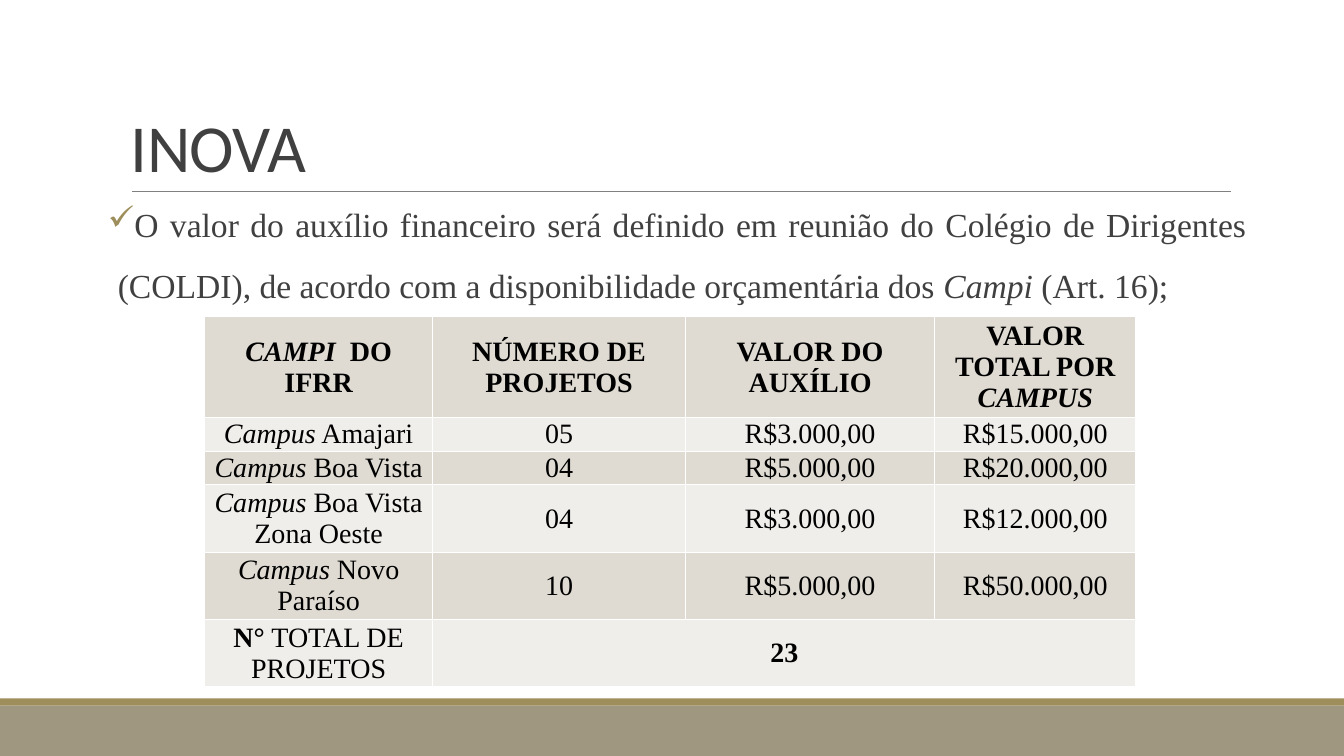
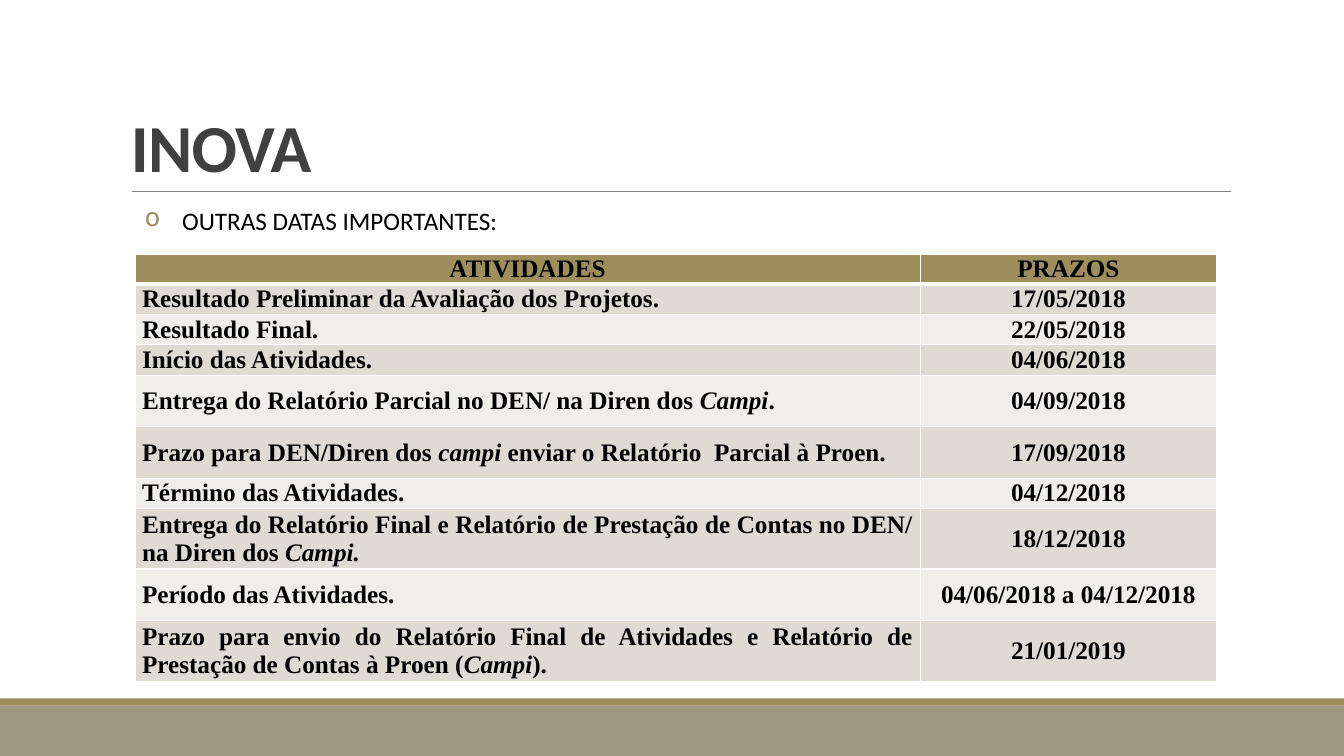
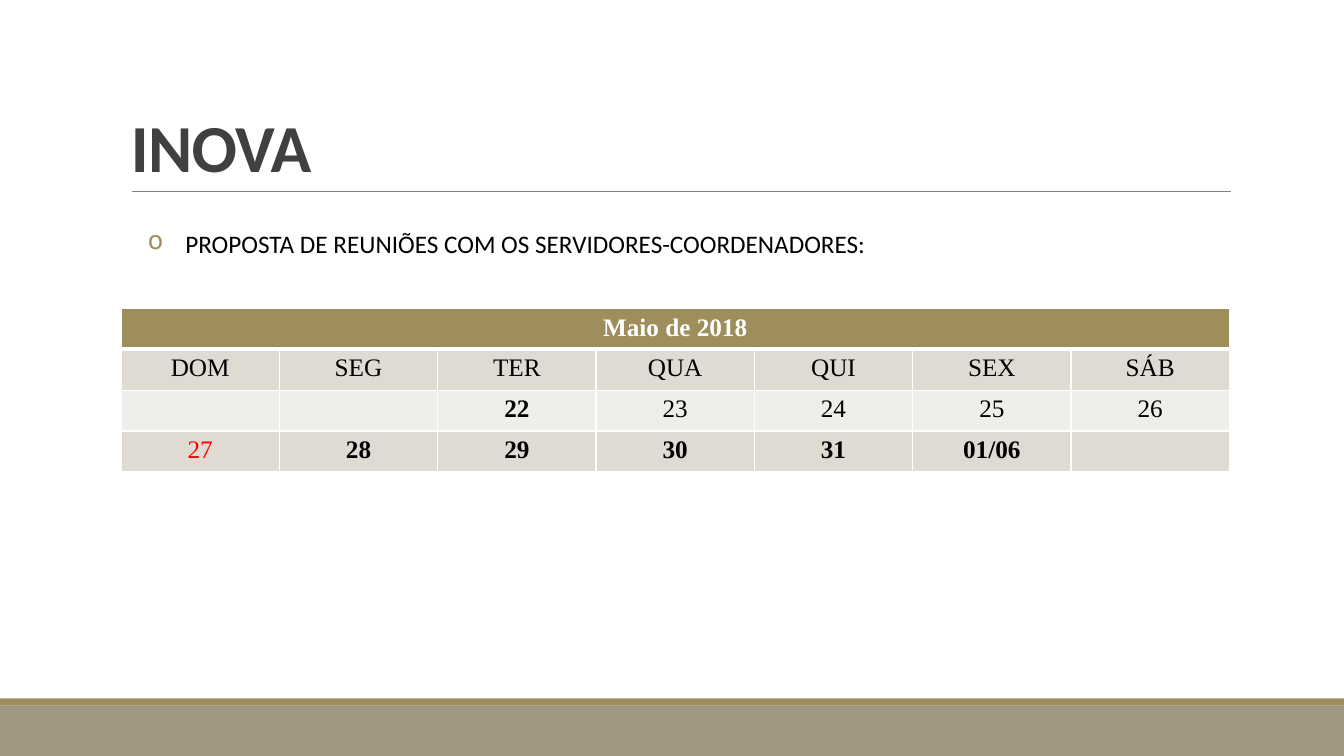
"""Build the three INOVA slides: grants, deadlines and meeting calendar."""
from dataclasses import dataclass, field
from typing import Optional

from lxml import etree
from pptx import Presentation
from pptx.dml.color import RGBColor
from pptx.enum.shapes import MSO_CONNECTOR, MSO_SHAPE
from pptx.enum.text import MSO_ANCHOR, PP_ALIGN
from pptx.oxml.ns import qn
from pptx.util import Cm, Pt

RECTANGLE = MSO_SHAPE.RECTANGLE
STRAIGHT = MSO_CONNECTOR.STRAIGHT
TOP, MIDDLE, BOTTOM = MSO_ANCHOR.TOP, MSO_ANCHOR.MIDDLE, MSO_ANCHOR.BOTTOM
LEFT, CENTER, JUSTIFY = PP_ALIGN.LEFT, PP_ALIGN.CENTER, PP_ALIGN.JUSTIFY

SANS, SERIF = "Calibri", "Times New Roman"
WHITE, BLACK, RED = "FFFFFF", "000000", "FF0000"
GOLD, TAUPE, GRAY, INK = "9E8E5C", "A09781", "808080", "404040"
BAND_FILLS = ("F0EEEA", "DFDBD2")
SLIDE_WIDTH, SLIDE_HEIGHT = 33.87, 19.05


@dataclass(frozen=True)
class Band:
    """A full-width strip at the foot of a slide."""
    top: float
    height: float
    fill: str


@dataclass(frozen=True)
class Grid:
    """A table: in its texts, *stars* mark bold and _underscores_ mark italic."""
    left: float
    top: float
    widths: list[float]
    heights: list[float]
    rows: list[list[str]]
    size: float
    aligns: list[PP_ALIGN]
    anchor: MSO_ANCHOR = MIDDLE
    margins: tuple[float, float] = (0.18, 0)
    header_fill: Optional[str] = None
    header_color: str = BLACK
    merge: Optional[tuple[int, int, int]] = None
    colors: dict[str, str] = field(default_factory=dict)


BANDS = [Band(17.78, 1.27, TAUPE), Band(17.6, 0.18, GOLD)]

GRANTS = Grid(
    5.16, 7.98, [5.74, 6.38, 6.27, 5.08], [1.3, 0.66, 0.66, 1.3, 1.3, 1.3],
    [
        ["*_CAMPI_  DO IFRR*", "*NÚMERO DE PROJETOS*", "*VALOR DO AUXÍLIO*",
         "*VALOR TOTAL POR _CAMPUS_*"],
        ["_Campus_ Amajari", "05", "R$3.000,00", "R$15.000,00"],
        ["_Campus_ Boa Vista", "04", "R$5.000,00", "R$20.000,00"],
        ["_Campus_ Boa Vista Zona Oeste", "04", "R$3.000,00", "R$12.000,00"],
        ["_Campus_ Novo Paraíso", "10", "R$5.000,00", "R$50.000,00"],
        ["*N°* TOTAL DE PROJETOS", "*23*", "", ""],
    ],
    20, [CENTER] * 4, merge=(5, 1, 3),
)

DEADLINES = Grid(
    3.4, 6.4, [19.79, 7.47], [0.71] * 4 + [1.3, 1.3, 0.71] + [1.3] * 3,
    [
        ["*ATIVIDADES*", "*PRAZOS*"],
        ["*Resultado Preliminar da Avaliação dos Projetos.*", "*17/05/2018*"],
        ["*Resultado Final.*", "*22/05/2018*"],
        ["*Início das Atividades.*", "*04/06/2018*"],
        ["*Entrega do Relatório Parcial no DEN/ na Diren dos _Campi_.*",
         "*04/09/2018*"],
        ["*Prazo para DEN/Diren dos _campi_ enviar o Relatório  Parcial à Proen.*",
         "*17/09/2018*"],
        ["*Término das Atividades.*", "*04/12/2018*"],
        ["*Entrega do Relatório Final e Relatório de Prestação de Contas no DEN/ "
         "na Diren dos _Campi._*", "*18/12/2018*"],
        ["*Período das Atividades.*", "*04/06/2018 a 04/12/2018*"],
        ["*Prazo para envio do Relatório Final de Atividades e Relatório de "
         "Prestação de Contas à Proen (_Campi_).*", "*21/01/2019*"],
    ],
    18, [JUSTIFY, CENTER], header_fill=GOLD,
)

CALENDAR = Grid(
    3.05, 7.77, [3.99] * 7, [1.03] * 4,
    [
        ["*Maio de 2018*"] + [""] * 6,
        ["DOM", "SEG", "TER", "QUA", "QUI", "SEX", "SÁB"],
        ["", "", "*22*", "23", "24", "25", "26"],
        ["27", "*28*", "*29*", "*30*", "*31*", "*01/06*", ""],
    ],
    18, [CENTER] * 7, anchor=TOP, margins=(0.25, 0.13), header_fill=GOLD,
    header_color=WHITE, merge=(0, 0, 6), colors={"27": RED},
)


def rgb(color: str) -> RGBColor:
    """Turn a hex string into a colour."""
    return RGBColor.from_string(color)


def write(para, text: str, *, size: float, font: str = SANS, color: str = BLACK,
          align: PP_ALIGN = LEFT, tracking: Optional[int] = None) -> None:
    """Fill a paragraph from marked-up text in one format."""
    para.alignment = align
    for bold_index, part in enumerate(text.split("*")):
        for italic_index, piece in enumerate(part.split("_")):
            if not piece:
                continue
            span = para.add_run()
            span.text = piece
            span.font.name = font
            span.font.size = Pt(size)
            span.font.color.rgb = rgb(color)
            span.font.bold = bold_index % 2 == 1
            span.font.italic = italic_index % 2 == 1
            if tracking is not None:
                span.font._element.set("spc", str(tracking))


def add_bullet(para, mark: str, indent: float) -> None:
    """Give a paragraph a gold bullet with a hanging indent."""
    properties = para._p.get_or_add_pPr()
    properties.set("marL", str(Cm(indent)))
    properties.set("indent", str(-Cm(indent)))
    color = etree.SubElement(properties, qn("a:buClr"))
    etree.SubElement(color, qn("a:srgbClr"), val=GOLD)
    etree.SubElement(properties, qn("a:buChar"), char=mark)


def add_box(page, left: float, top: float, width: float, height: float,
            anchor: MSO_ANCHOR = TOP):
    """Add a wrapping text box and return its frame."""
    box = page.shapes.add_textbox(Cm(left), Cm(top), Cm(width), Cm(height))
    frame = box.text_frame
    frame.word_wrap = True
    frame.vertical_anchor = anchor
    return frame


def add_page(deck, title: str):
    """Add a blank page with the shared bands, rule and title."""
    page = deck.slides.add_slide(deck.slide_layouts[6])
    for band in BANDS:
        strip = page.shapes.add_shape(
            RECTANGLE, 0, Cm(band.top), Cm(SLIDE_WIDTH), Cm(band.height))
        strip.shadow.inherit = False
        strip.fill.solid()
        strip.fill.fore_color.rgb = rgb(band.fill)
        strip.line.fill.background()
    rule = page.shapes.add_connector(
        STRAIGHT, Cm(3.33), Cm(4.83), Cm(31.01), Cm(4.83))
    rule.line.color.rgb = rgb(GRAY)
    rule.line.width = Pt(0.5)
    etree.SubElement(rule._element.spPr, qn("a:effectLst"))
    para = add_box(page, 3.05, 0.79, 27.94, 4.04, BOTTOM).paragraphs[0]
    para.line_spacing = 0.85
    write(para, title, size=48, color=INK, tracking=-50)
    return page


def add_note(page, left: float, top: float, text: str) -> None:
    """Add the bulleted heading above a table."""
    para = add_box(page, left, top, 27.61, 1.02).paragraphs[0]
    write(para, text, size=18)
    add_bullet(para, "o", 0.94)


def set_borders(cell, widths: dict[str, float]) -> None:
    """Draw white borders around a cell, widths in points by side."""
    properties = cell._tc.get_or_add_tcPr()
    for side, width in widths.items():
        line = etree.SubElement(properties, qn(f"a:ln{side}"), w=str(Pt(width)))
        fill = etree.SubElement(line, qn("a:solidFill"))
        etree.SubElement(fill, qn("a:srgbClr"), val=WHITE)


def add_grid(page, grid: Grid) -> None:
    """Draw a table with banded rows."""
    table = page.shapes.add_table(
        len(grid.heights), len(grid.widths), Cm(grid.left), Cm(grid.top),
        Cm(sum(grid.widths)), Cm(sum(grid.heights))).table
    table.first_row = False
    table.horz_banding = False
    for column, width in zip(table.columns, grid.widths):
        column.width = Cm(width)
    for row, height in zip(table.rows, grid.heights):
        row.height = Cm(height)
    side_margin, edge_margin = grid.margins
    for row_index, texts in enumerate(grid.rows):
        is_header = row_index == 0 and grid.header_fill is not None
        below_header = row_index == 1 and grid.header_fill is not None
        fill = grid.header_fill if is_header else BAND_FILLS[(row_index + 1) % 2]
        if grid.header_fill and not is_header:
            fill = BAND_FILLS[row_index % 2]
        base_color = grid.header_color if is_header else BLACK
        for column_index, text in enumerate(texts):
            cell = table.cell(row_index, column_index)
            cell.margin_left = cell.margin_right = Cm(side_margin)
            cell.margin_top = cell.margin_bottom = Cm(edge_margin)
            cell.vertical_anchor = grid.anchor
            set_borders(cell, {"L": 1, "R": 1, "T": 3 if below_header else 1,
                               "B": 3 if is_header else 1})
            cell.fill.solid()
            cell.fill.fore_color.rgb = rgb(fill)
            align = CENTER if row_index == 0 else grid.aligns[column_index]
            write(cell.text_frame.paragraphs[0], text, size=grid.size, font=SERIF,
                  color=grid.colors.get(text, base_color), align=align)
    if grid.merge:
        row_index, first, last = grid.merge
        table.cell(row_index, first).merge(table.cell(row_index, last))


def build_grants(deck) -> None:
    """Build the slide on grant values per campus."""
    page = add_page(deck, "INOVA")
    frame = add_box(page, 2.72, 5.79, 28.7, 2.31, BOTTOM)
    frame.margin_left = frame.margin_right = 0
    frame.margin_bottom = Cm(0.41)
    para = frame.paragraphs[0]
    para.line_spacing = Pt(43.6)
    write(para, "O valor do auxílio financeiro será definido em reunião do Colégio de "
                "Dirigentes (COLDI), de acordo com a disponibilidade orçamentária dos "
                "_Campi_ (Art. 16);",
          size=24, font=SERIF, color=INK, align=JUSTIFY)
    add_bullet(para, "✓", 0.25)
    add_grid(page, GRANTS)


def build_deadlines(deck) -> None:
    """Build the slide on activities and their deadlines."""
    page = add_page(deck, "*INOVA*")
    add_grid(page, DEADLINES)
    add_note(page, 3.4, 5.05, "OUTRAS DATAS IMPORTANTES:")


def build_calendar(deck) -> None:
    """Build the slide with the meeting calendar."""
    page = add_page(deck, "*INOVA*")
    add_grid(page, CALENDAR)
    add_note(page, 3.48, 5.64,
             "PROPOSTA DE REUNIÕES COM OS SERVIDORES-COORDENADORES:")


def main() -> None:
    """Build and save the deck."""
    deck = Presentation()
    deck.slide_width, deck.slide_height = Cm(SLIDE_WIDTH), Cm(SLIDE_HEIGHT)
    for build in (build_grants, build_deadlines, build_calendar):
        build(deck)
    deck.save("out.pptx")


if __name__ == "__main__":
    main()
